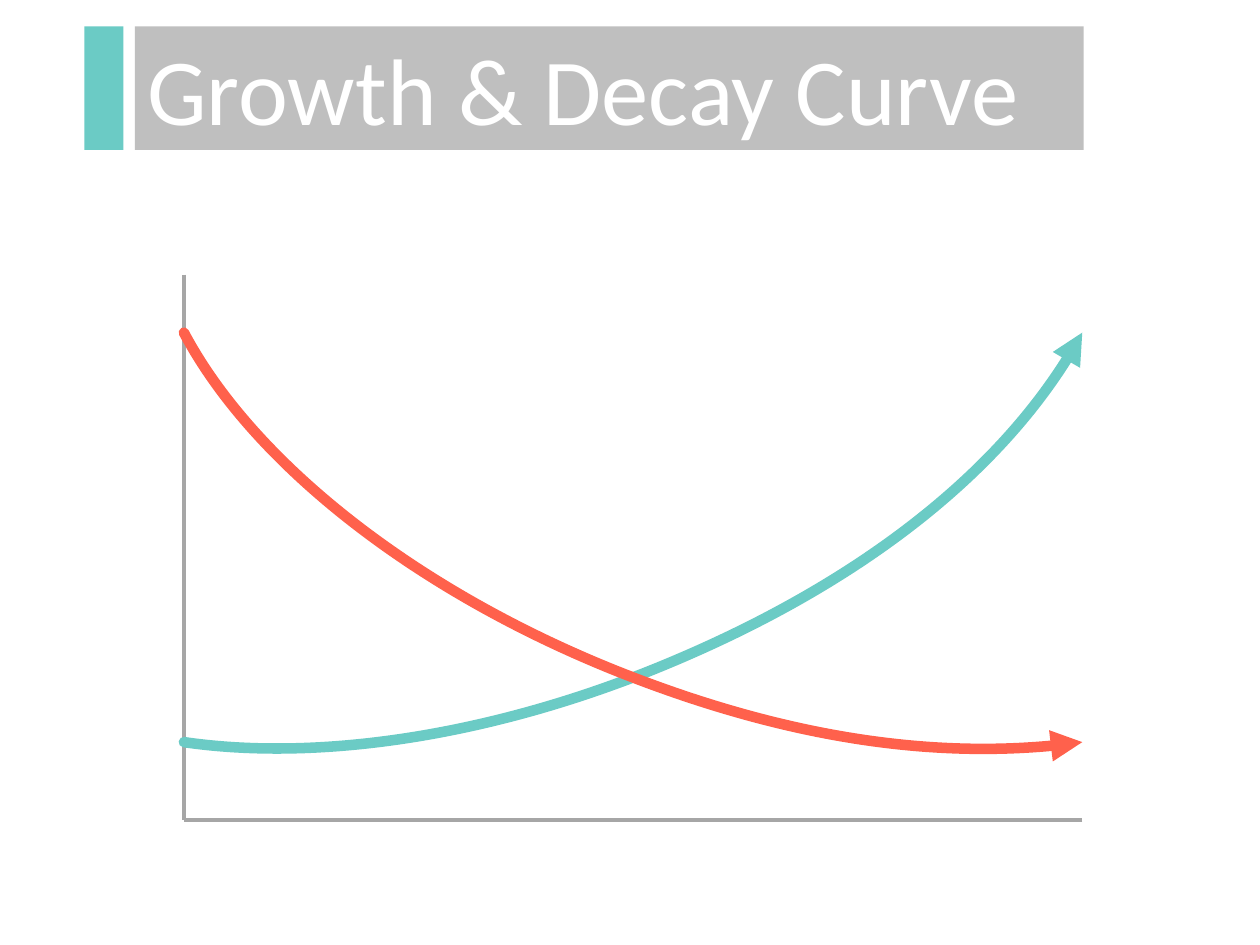
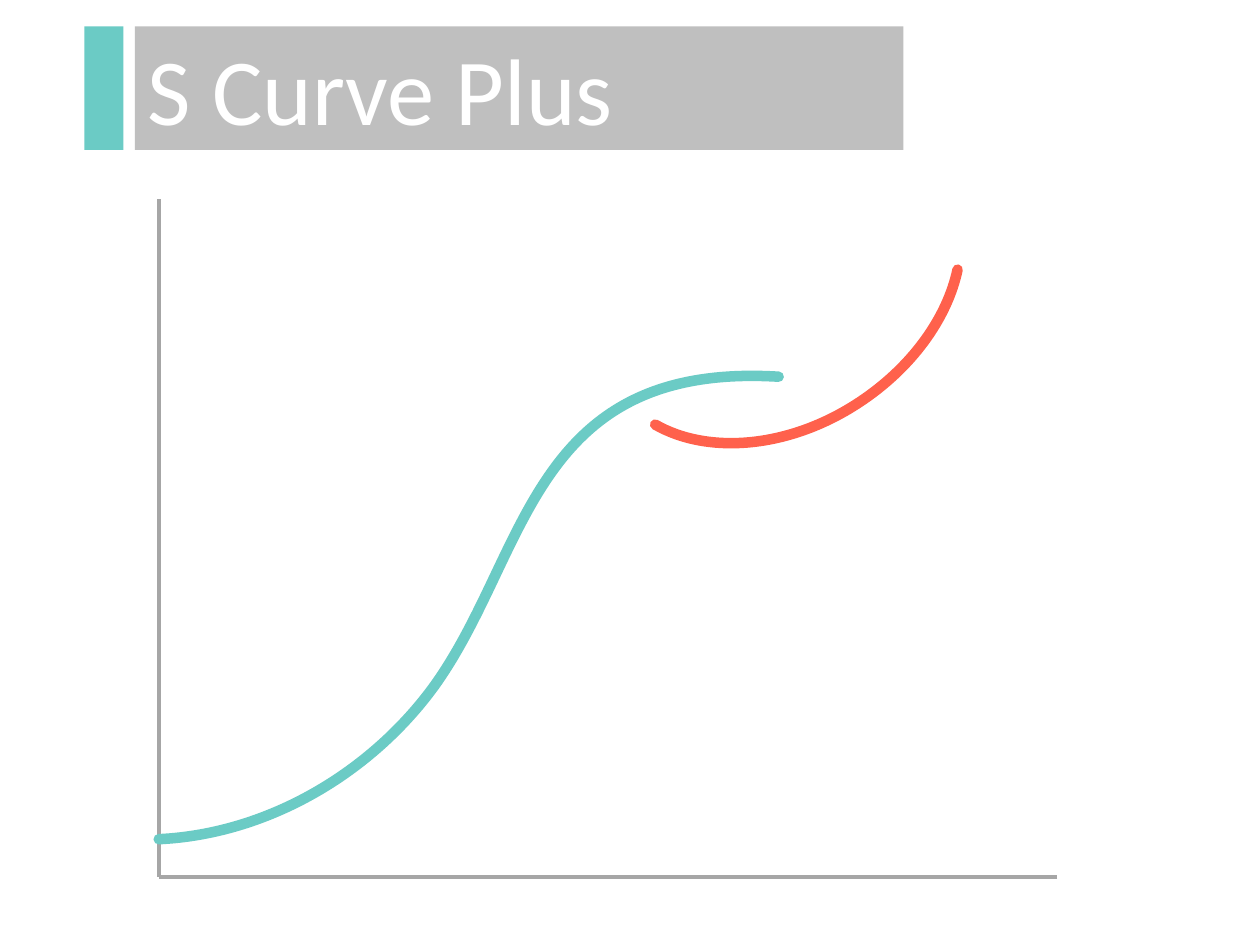
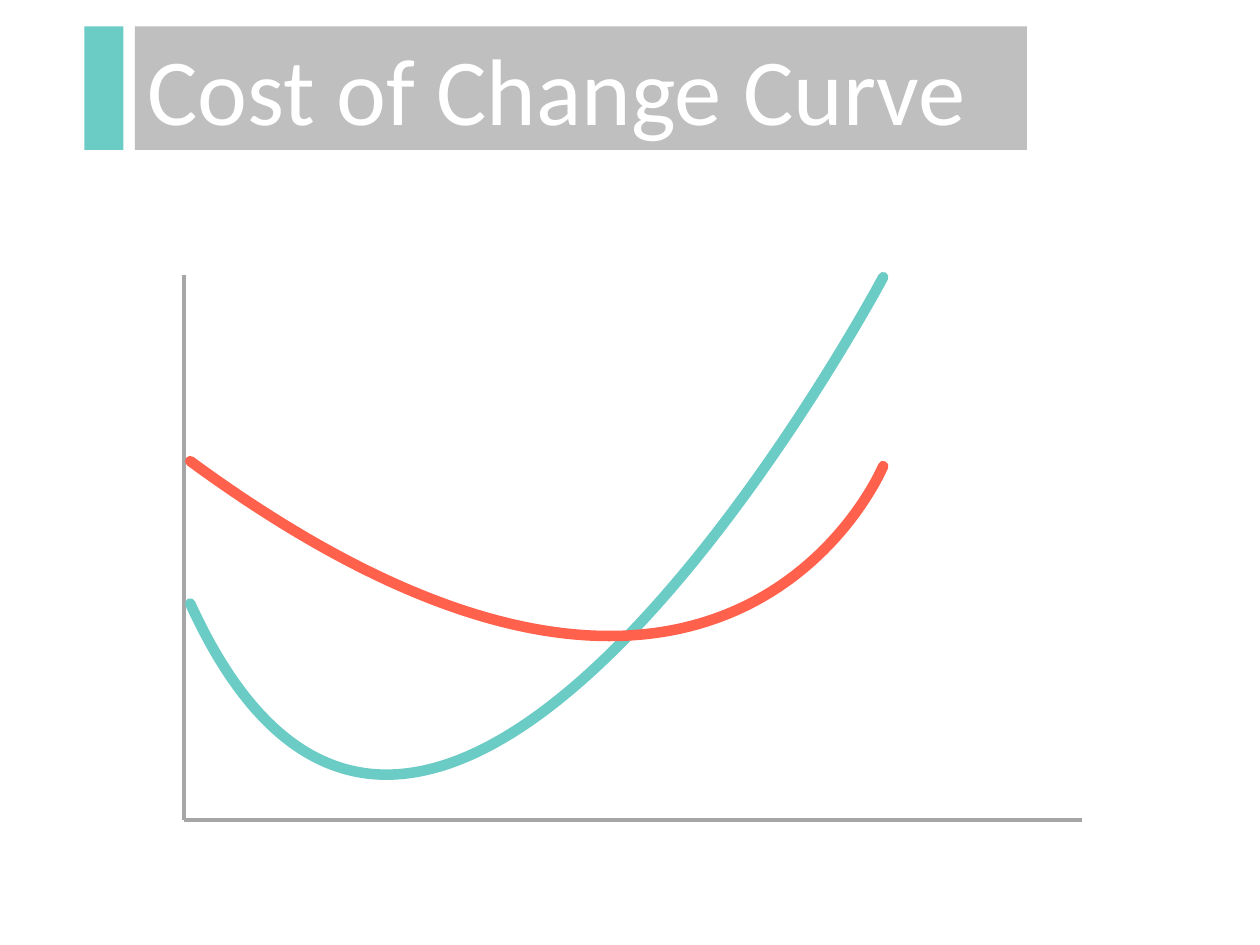
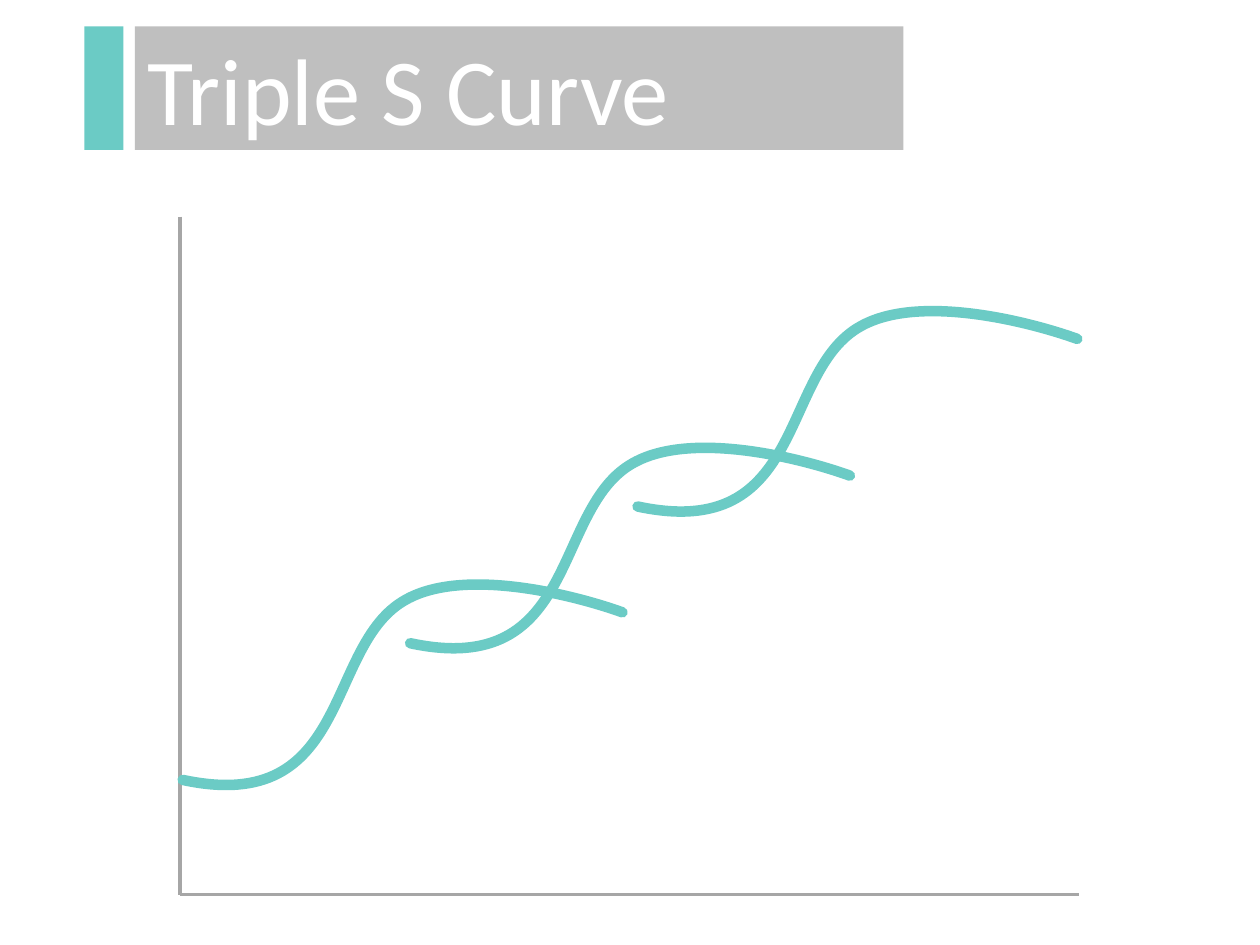
from lxml import etree
from pptx import Presentation
from pptx.dml.color import RGBColor
from pptx.enum import shapes, text
from pptx.oxml.ns import qn
from pptx.util import Inches, Pt

TEAL = RGBColor(0x6B, 0xCB, 0xC5)
CORAL = RGBColor(0xFF, 0x61, 0x4C)
BAND = RGBColor(0xBF, 0xBF, 0xBF)
AXIS = RGBColor(0xA6, 0xA6, 0xA6)
WHITE = RGBColor(0xFF, 0xFF, 0xFF)

FONT = "Calibri"
BAND_TOP, BAND_HEIGHT = 0.21, 0.98
ACCENT_LEFT, ACCENT_WIDTH = 0.67, 0.31
TITLE_LEFT = 1.07
AXIS_LENGTH = 7.13

# A curve is a start point followed by three Bezier points per segment.
GROWTH = [(8.59, 2.64), (8.06, 3.64), (6.81, 4.66), (5.17, 5.32),
          (3.82, 5.86), (2.49, 6.04), (1.46, 5.89)]
DECAY = [(10.05 - x, y) for x, y in GROWTH]
FIRST_S = [(1.45, 6.19), (2.8, 6.48), (2.57, 5.12), (3.22, 4.76),
           (3.68, 4.5), (4.55, 4.72), (4.94, 4.86)]
S_STEP = (1.805, -1.085)
TRIPLE_S = [[(x + i * S_STEP[0], y + i * S_STEP[1]) for x, y in FIRST_S]
            for i in range(3)]

# axes: left, top, bottom; curves: points, colour, arrowhead
SLIDES = [
    {"title": "Growth & Decay Curve", "width": 7.53, "axes": (1.46, 2.18, 6.51),
     "curves": [(GROWTH, TEAL, "a:headEnd"), (DECAY, CORAL, "a:tailEnd")]},
    {"title": "S Curve Plus", "width": 6.1, "axes": (1.26, 1.58, 6.96),
     "curves": [
         ([(1.26, 6.66), (2.13, 6.62), (2.95, 6.13), (3.45, 5.44),
           (4.2, 4.39), (4.21, 2.87), (6.18, 2.99)], TEAL, None),
         ([(7.6, 2.14), (7.52, 2.52), (7.24, 2.92), (6.81, 3.2),
           (6.26, 3.56), (5.62, 3.61), (5.2, 3.37)], CORAL, None)]},
    {"title": "Cost of Change Curve", "width": 7.08, "axes": (1.46, 2.18, 6.51),
     "curves": [
         ([(1.51, 4.79), (3.41, 8.96), (7.01, 2.2), (7.01, 2.2)], TEAL, None),
         ([(1.51, 3.66), (5.74, 6.76), (7.01, 3.7), (7.01, 3.7)], CORAL, None)]},
    {"title": "Triple S Curve", "width": 6.1, "axes": (1.43, 1.72, 7.1),
     "curves": [(points, TEAL, None) for points in TRIPLE_S]},
]


def place(sp, left, top, width, height):
    sp.left, sp.top = Inches(left), Inches(top)
    sp.width, sp.height = Inches(width), Inches(height)


def fill(sp, color):
    sp.fill.solid()
    sp.fill.fore_color.rgb = color


def write(sp, content, size, color):
    tf = sp.text_frame
    tf.word_wrap = True
    tf.auto_size = text.MSO_AUTO_SIZE.NONE
    tf.vertical_anchor = text.MSO_ANCHOR.MIDDLE
    p = tf.paragraphs[0]
    p.alignment = text.PP_ALIGN.LEFT
    r = p.add_run()
    r.text = content
    r.font.name, r.font.size = FONT, Pt(size)
    r.font.color.rgb = color


def add_header(s, title, width):
    accent = s.shapes.add_shape(shapes.MSO_SHAPE.RECTANGLE, 0, 0, 0, 0)
    place(accent, ACCENT_LEFT, BAND_TOP, ACCENT_WIDTH, BAND_HEIGHT)
    fill(accent, TEAL)
    accent.line.fill.background()
    accent.shadow.inherit = False
    sp = s.shapes.title
    place(sp, TITLE_LEFT, BAND_TOP, width, BAND_HEIGHT)
    fill(sp, BAND)
    write(sp, title, size=54, color=WHITE)


def add_axes(s, left, top, bottom):
    for x, y in ((left, top), (left + AXIS_LENGTH, bottom)):
        axis = s.shapes.add_connector(
            shapes.MSO_CONNECTOR.STRAIGHT,
            Inches(x), Inches(y), Inches(left), Inches(bottom))
        axis.line.color.rgb = AXIS
        axis.line.width = Pt(2)
        etree.SubElement(axis._element.spPr, qn("a:effectLst"))


def add_curve(s, points, color, arrow):
    """Outline the control points, then turn each three segments into a Bezier."""
    start, *rest = [(Inches(x), Inches(y)) for x, y in points]
    builder = s.shapes.build_freeform(*start)
    builder.add_line_segments(rest, close=False)
    sp = builder.convert_to_shape()
    segments = list(sp._element.iter(qn("a:lnTo")))
    for i in range(0, len(segments), 3):
        bezier = etree.SubElement(segments[i].getparent(), qn("a:cubicBezTo"))
        for segment in segments[i:i + 3]:
            bezier.append(segment[0])
            segment.getparent().remove(segment)
    sp.fill.background()
    sp.shadow.inherit = False
    sp.line.color.rgb = color
    sp.line.width = Pt(6)
    ln = sp._element.spPr.find(qn("a:ln"))
    ln.set("cap", "rnd")
    etree.SubElement(ln, qn("a:round"))
    if arrow:
        etree.SubElement(ln, qn(arrow), type="triangle")


def main():
    prs = Presentation()
    prs.slide_width, prs.slide_height = Inches(10), Inches(7.5)
    for content in SLIDES:
        s = prs.slides.add_slide(prs.slide_layouts[5])
        add_header(s, content["title"], content["width"])
        add_axes(s, *content["axes"])
        for curve in content["curves"]:
            add_curve(s, *curve)
    prs.save("out.pptx")


if __name__ == "__main__":
    main()
